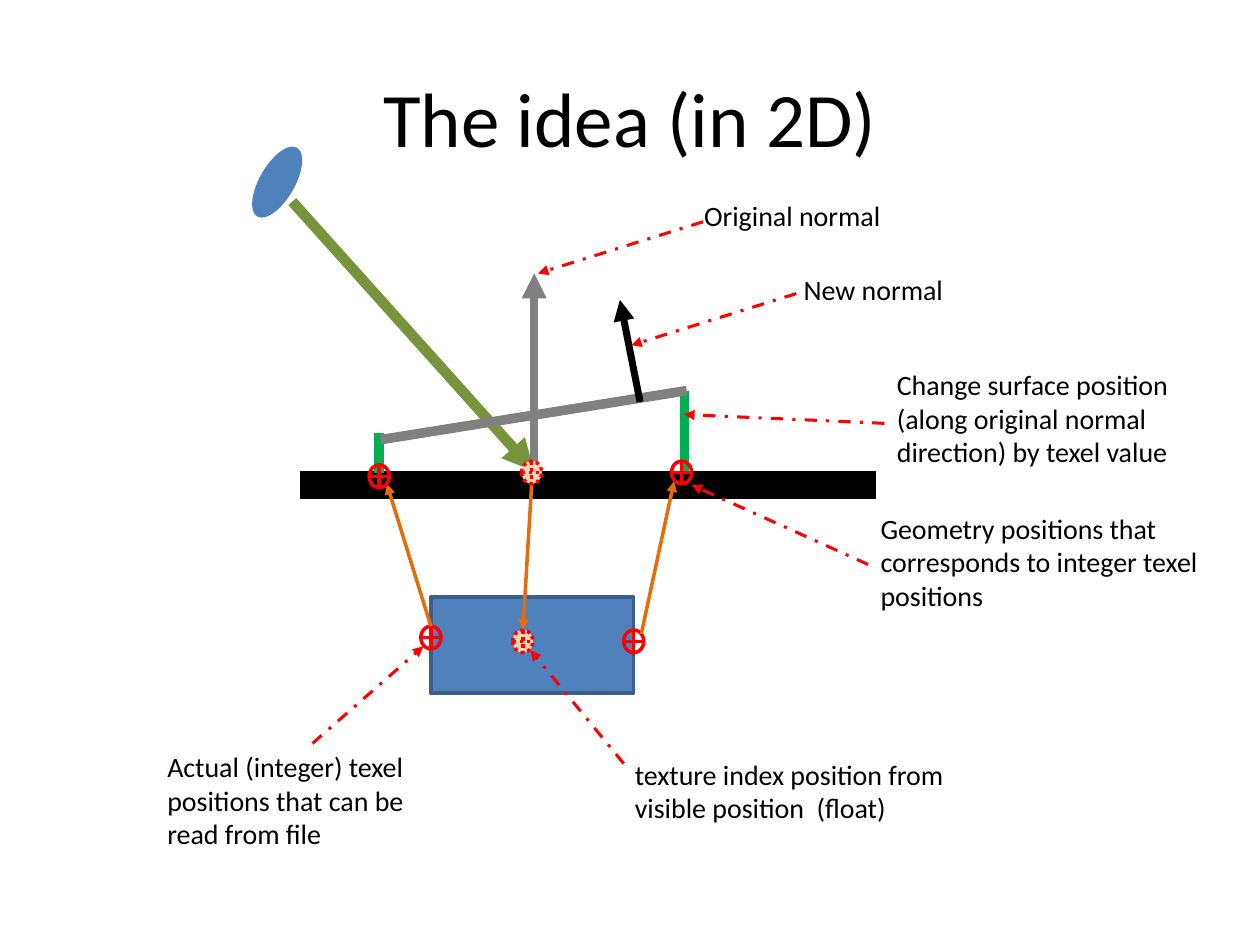
from dataclasses import dataclass

from lxml import etree
from pptx import Presentation
from pptx.dml.color import RGBColor
from pptx.enum.dml import MSO_LINE
from pptx.enum.shapes import MSO_CONNECTOR, MSO_SHAPE
from pptx.enum.text import MSO_ANCHOR, PP_ALIGN
from pptx.oxml.ns import qn
from pptx.util import Inches, Pt

STRAIGHT = MSO_CONNECTOR.STRAIGHT
RECT, OVAL, CROSS = MSO_SHAPE.RECTANGLE, MSO_SHAPE.OVAL, MSO_SHAPE.FLOWCHART_OR
DOTS, DASHES = MSO_LINE.ROUND_DOT, MSO_LINE.DASH_DOT
MIDDLE, CENTER, LEFT = MSO_ANCHOR.MIDDLE, PP_ALIGN.CENTER, PP_ALIGN.LEFT
TOP = MSO_ANCHOR.TOP


@dataclass(frozen=True)
class Theme:
    font: str = "Calibri"
    title: float = 44
    body: float = 16
    ink: str = "000000"
    blue: str = "4F81BD"
    edge: str = "3A5F8C"
    red: str = "FF0000"
    peach: str = "FCD5B5"
    gray: str = "808080"
    olive: str = "77933C"
    green: str = "00B050"
    orange: str = "E46C0A"


@dataclass(frozen=True)
class Stroke:
    color: str
    width: float
    arrow: bool = False
    dash: MSO_LINE | None = None


@dataclass(frozen=True)
class Line:
    start: tuple[float, float]
    end: tuple[float, float]
    stroke: Stroke


@dataclass(frozen=True)
class Mark:
    left: float
    top: float
    sampled: bool = False


@dataclass(frozen=True)
class Note:
    text: str
    left: float
    top: float
    width: float
    height: float


THEME = Theme()
LEAD = Stroke(THEME.red, 1.75, True, DASHES)
MAP = Stroke(THEME.orange, 2, True)
MARK_W, MARK_H = 0.16, 0.18

TEXELS = [Mark(4.07, 5, True), Mark(4.95, 5), Mark(3.34, 4.97)]
POINTS = [Mark(5.33, 3.66), Mark(4.14, 3.66, True), Mark(2.93, 3.69)]

SURFACE = [
    Line((6.95, 3.85), (2.38, 3.85), Stroke(THEME.ink, 16.25)),
    Line((4.24, 3.75), (4.24, 2.17), Stroke(THEME.gray, 4.75, True)),
    Line((2.32, 1.6), (4.24, 3.74), Stroke(THEME.olive, 6, True)),
    Line((3.01, 3.44), (3.01, 3.75), Stroke(THEME.green, 5.5)),
    Line((5.43, 3.1), (5.43, 3.74), Stroke(THEME.green, 5)),
    Line((5.45, 3.1), (3.02, 3.49), Stroke(THEME.gray, 5.5)),
    Line((5.08, 3.19), (4.92, 2.38), Stroke(THEME.ink, 4, True)),
]
MAPS = [
    Line((4.22, 3.84), (4.15, 5), MAP),
    Line((5.09, 5.03), (5.35, 3.82), MAP),
    Line((3.42, 4.97), (3.07, 3.84), MAP),
]
LEADS = [
    Line((6.32, 2.33), (5.01, 2.74), LEAD),
    Line((5.58, 1.76), (4.27, 2.17), LEAD),
    Line((7.02, 3.36), (5.43, 3.29), LEAD),
    Line((6.89, 4.48), (5.49, 3.85), LEAD),
    Line((4.95, 6.06), (4.21, 5.16), LEAD),
    Line((2.48, 5.9), (3.36, 5.13), LEAD),
]
NOTES = [
    Note("Original normal", 5.49, 1.53, 2.29, 0.43),
    Note("New normal", 6.28, 2.11, 2.22, 0.68),
    Note("Change surface position (along original normal direction) by texel value",
         7.02, 2.87, 2.5, 0.98),
    Note("Geometry positions that corresponds to integer texel positions",
         6.89, 4.01, 3.06, 0.94),
    Note("texture index position from visible position  (float)",
         4.94, 5.96, 2.84, 0.92),
    Note("Actual (integer) texel positions that can be read from file",
         1.23, 5.9, 2.5, 0.98),
]


def set_line(line, stroke: Stroke) -> None:
    line.color.rgb = RGBColor.from_string(stroke.color)
    line.width = Pt(stroke.width)
    if stroke.dash is not None:
        line.dash_style = stroke.dash


def draw_line(slide, item: Line) -> None:
    ends = [Inches(n) for n in (*item.start, *item.end)]
    link = slide.shapes.add_connector(STRAIGHT, *ends)
    set_line(link.line, item.stroke)
    props = link._element.spPr
    if item.stroke.arrow:
        etree.SubElement(props.find(qn("a:ln")), qn("a:tailEnd"), type="triangle")
    etree.SubElement(props, qn("a:effectLst"))


def draw_shape(slide, kind, box: tuple, fill: str | None, stroke: Stroke | None):
    shape = slide.shapes.add_shape(kind, *[Inches(n) for n in box])
    shape.shadow.inherit = False
    if fill:
        shape.fill.solid()
        shape.fill.fore_color.rgb = RGBColor.from_string(fill)
    else:
        shape.fill.background()
    if stroke:
        set_line(shape.line, stroke)
    else:
        shape.line.fill.background()
    return shape


def draw_mark(slide, mark: Mark) -> None:
    """Draw a crossed ring, dotted and filled where the position is sampled."""
    stroke = Stroke(THEME.red, 2, dash=DOTS if mark.sampled else None)
    fill = THEME.peach if mark.sampled else None
    draw_shape(slide, CROSS, (mark.left, mark.top, MARK_W, MARK_H), fill, stroke)


def set_text(frame, text: str, size: float, align, anchor) -> None:
    frame.text = text
    frame.word_wrap = True
    frame.vertical_anchor = anchor
    para = frame.paragraphs[0]
    para.alignment = align
    font = para.runs[0].font
    font.name, font.size = THEME.font, Pt(size)
    font.color.rgb = RGBColor.from_string(THEME.ink)


def draw_note(slide, note: Note) -> None:
    box = [Inches(n) for n in (note.left, note.top, note.width, note.height)]
    frame = slide.shapes.add_textbox(*box).text_frame
    set_text(frame, note.text, THEME.body, LEFT, TOP)


def main() -> None:
    deck = Presentation()
    deck.slide_width, deck.slide_height = Inches(10), Inches(7.5)
    slide = deck.slides.add_slide(deck.slide_layouts[5])

    title = slide.shapes.title
    title.left, title.top = Inches(0.5), Inches(0.3)
    title.width, title.height = Inches(9), Inches(1.25)
    set_text(title.text_frame, "The idea (in 2D)", THEME.title, CENTER, MIDDLE)

    draw_shape(slide, RECT, (3.42, 4.74, 1.61, 0.76), THEME.blue, Stroke(THEME.edge, 2))
    for mark in TEXELS:
        draw_mark(slide, mark)
    eye = draw_shape(slide, OVAL, (2.06, 1.13, 0.28, 0.63), THEME.blue, None)
    eye.rotation = 30
    for item in SURFACE + MAPS + LEADS:
        draw_line(slide, item)
    for mark in POINTS:
        draw_mark(slide, mark)
    for note in NOTES:
        draw_note(slide, note)

    deck.save("out.pptx")


if __name__ == "__main__":
    main()
